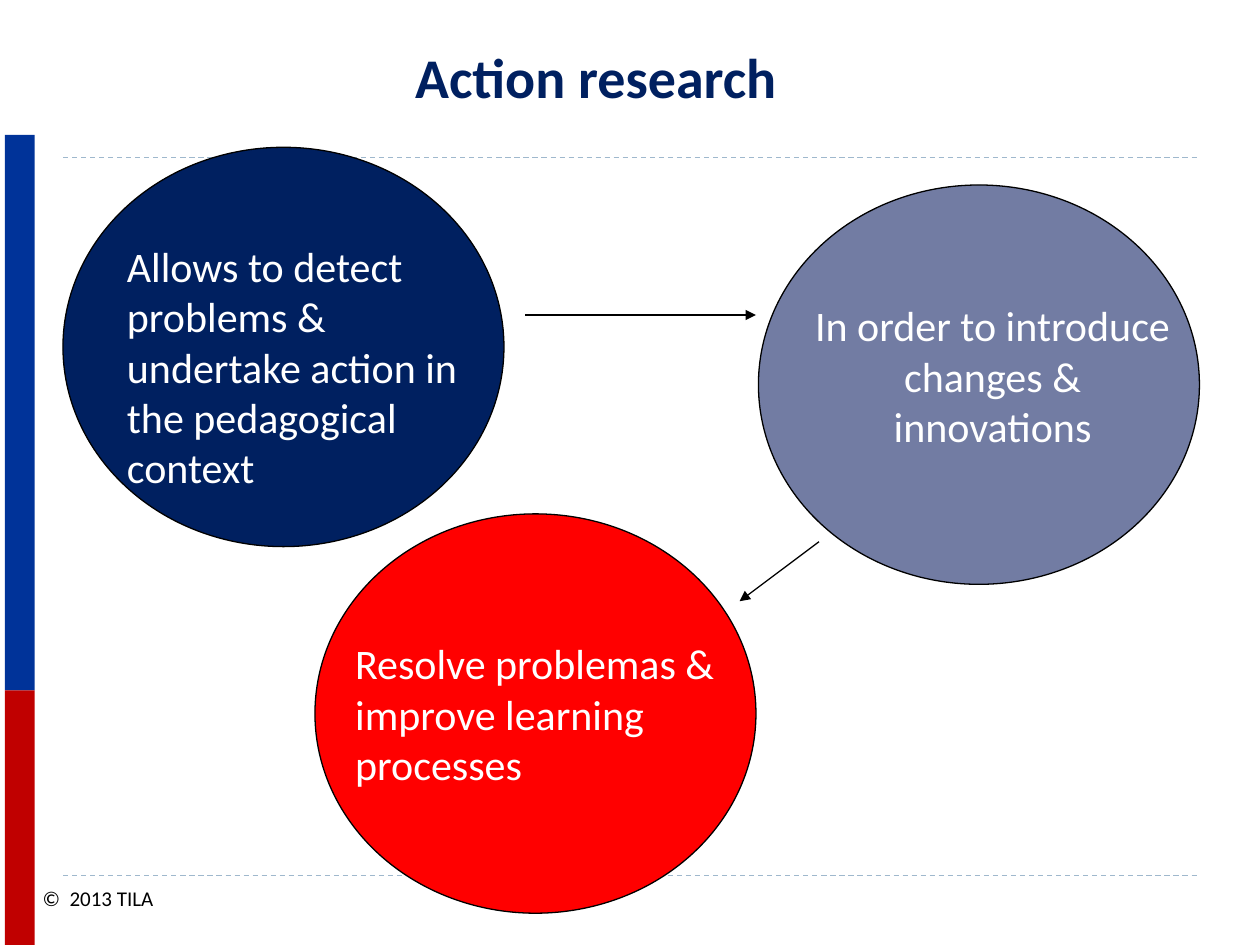
from lxml.etree import SubElement
from pptx import Presentation
from pptx.dml.color import RGBColor
from pptx.enum.dml import MSO_LINE
from pptx.enum.shapes import MSO_CONNECTOR, MSO_SHAPE
from pptx.enum.text import MSO_ANCHOR, PP_ALIGN
from pptx.oxml.ns import qn
from pptx.util import Cm, Pt

NAVY = RGBColor(0x00, 0x20, 0x60)
BLUE = RGBColor(0x00, 0x33, 0x99)
CRIMSON = RGBColor(0xC0, 0x00, 0x00)
RED = RGBColor(0xFF, 0x00, 0x00)
SLATE = RGBColor(0x72, 0x7C, 0xA3)
PALE = RGBColor(0x9F, 0xB8, 0xCD)
BLACK = RGBColor(0x00, 0x00, 0x00)
WHITE = RGBColor(0xFF, 0xFF, 0xFF)


class CycleSlide:
    font = "Calibri"
    stroke = Pt(0.75)
    circle_size = (8.89, 8.05)

    def __init__(self, page):
        self.page = page

    def shape(self, preset, left, top, width, height, fill, outline=None):
        shape = self.page.shapes.add_shape(
            preset, Cm(left), Cm(top), Cm(width), Cm(height))
        shape.shadow.inherit = False
        shape.fill.solid()
        shape.fill.fore_color.rgb = fill
        if outline is None:
            shape.line.fill.background()
        else:
            shape.line.color.rgb = outline
            shape.line.width = self.stroke

    def bar(self, top, height, fill):
        self.shape(MSO_SHAPE.RECTANGLE, 0.1, top, 0.6, height, fill)

    def circle(self, left, top, fill):
        self.shape(MSO_SHAPE.OVAL, left, top, *self.circle_size, fill, BLACK)

    def line(self, start, end, color):
        line = self.page.shapes.add_connector(
            MSO_CONNECTOR.STRAIGHT, *map(Cm, start + end))
        line.line.color.rgb = color
        line.line.width = self.stroke
        SubElement(line._element.spPr, qn("a:effectLst"))
        return line

    def rule(self, height):
        self.line((1.27, height), (24.13, height), PALE).line.dash_style = MSO_LINE.DASH

    def arrow(self, start, end):
        line = self.line(start, end, BLACK)
        SubElement(line.line._get_or_add_ln(), qn("a:tailEnd"), type="triangle")

    def text(self, words, left, top, width, height, size=24, color=WHITE,
             bold=False, align=PP_ALIGN.LEFT, anchor=MSO_ANCHOR.TOP):
        box = self.page.shapes.add_textbox(Cm(left), Cm(top), Cm(width), Cm(height))
        frame = box.text_frame
        frame.word_wrap = True
        frame.vertical_anchor = anchor
        para = frame.paragraphs[0]
        para.alignment = align
        span = para.add_run()
        span.text = words
        span.font.name = self.font
        span.font.size = Pt(size)
        span.font.bold = bold
        span.font.color.rgb = color


def main():
    deck = Presentation()
    deck.slide_width, deck.slide_height = Cm(25.4), Cm(19.05)
    slide = CycleSlide(deck.slides.add_slide(deck.slide_layouts[6]))

    for height in (17.65, 3.18):
        slide.rule(height)
    slide.bar(2.72, 11.2, BLUE)
    slide.bar(13.92, 5.13, CRIMSON)
    slide.text("©  2013 TILA", 0.61, 17.73, 3.3, 0.76, size=12, color=BLACK)
    slide.text("Action research", 2.49, 0, 19.05, 2.34, size=32, color=NAVY,
               bold=True, align=PP_ALIGN.CENTER, anchor=MSO_ANCHOR.BOTTOM)

    for left, top, fill in ((1.27, 2.97, NAVY), (6.35, 10.36, RED), (15.29, 3.73, SLATE)):
        slide.circle(left, top, fill)

    slide.text("Allows to detect problems & undertake action in the pedagogical context",
               2.31, 4.72, 7.42, 5.38)
    slide.arrow((10.59, 6.35), (15.24, 6.35))
    slide.text("In order to introduce changes & innovations",
               16.1, 5.92, 7.82, 3.33, align=PP_ALIGN.CENTER)
    slide.arrow((16.51, 10.92), (14.91, 12.12))
    slide.text("Resolve problemas & improve learning processes", 6.91, 12.73, 9.09, 3.33)

    deck.save("out.pptx")


if __name__ == "__main__":
    main()
